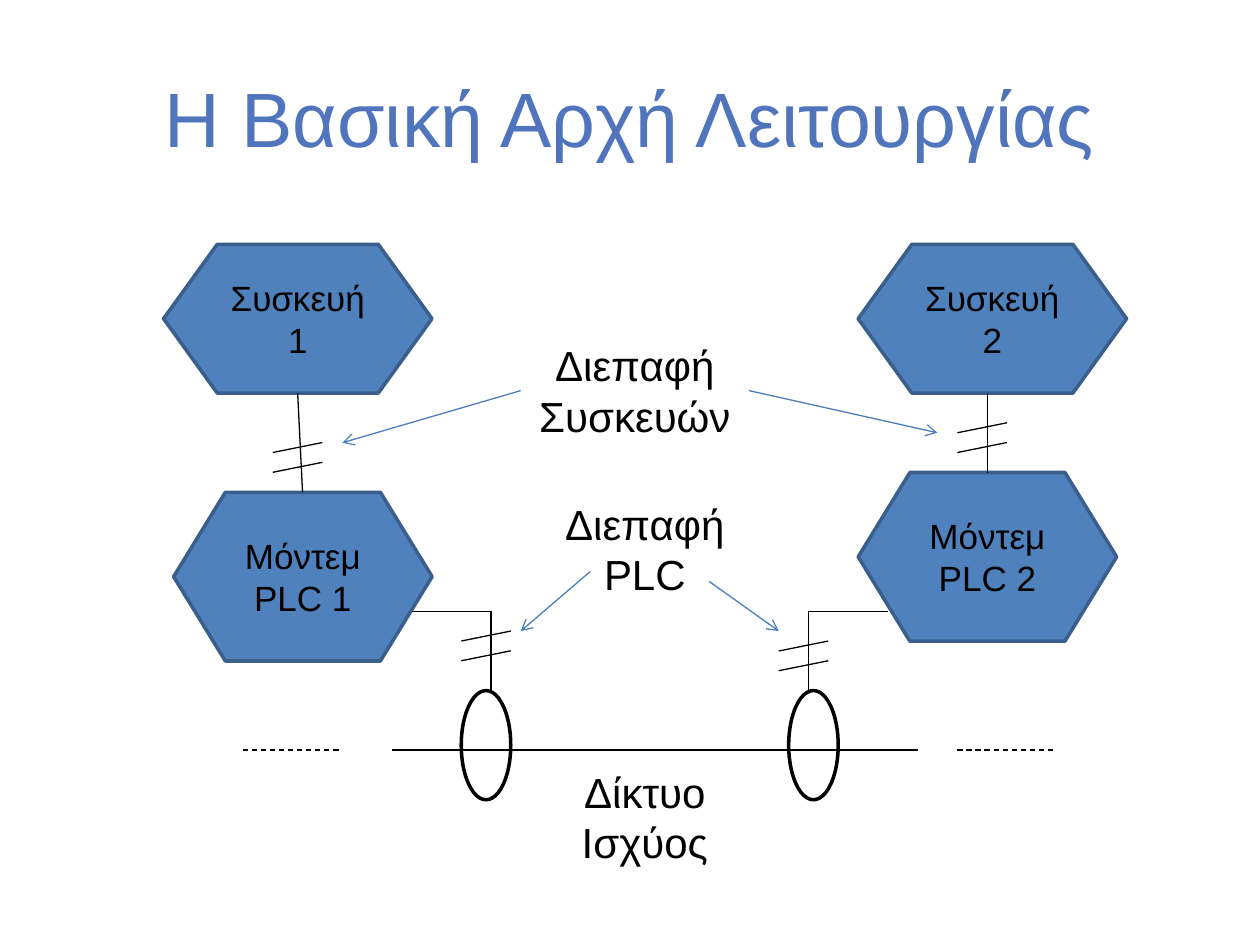
from dataclasses import dataclass
from typing import Any, NamedTuple, Optional

from lxml.etree import SubElement
from pptx import Presentation
from pptx.dml.color import RGBColor as RGB
from pptx.enum.dml import MSO_LINE as Dash
from pptx.enum.shapes import MSO_CONNECTOR as Conn, MSO_SHAPE as Shape
from pptx.enum.text import MSO_ANCHOR as Anchor, MSO_AUTO_SIZE as AutoSize, PP_ALIGN as Align
from pptx.oxml.ns import qn
from pptx.util import Pt


@dataclass(frozen=True)
class Theme:
    font: str = "Arial"
    title: RGB = RGB(0x50, 0x75, 0xBC)
    ink: RGB = RGB(0, 0, 0)
    paper: RGB = RGB(255, 255, 255)
    block: RGB = RGB(0x4F, 0x81, 0xBD)
    block_edge: RGB = RGB(0x3A, 0x5F, 0x8C)
    arrow: RGB = RGB(0x4B, 0x7E, 0xBC)
    title_size: int = 44
    label_size: int = 24
    block_size: int = 20
    edge: float = 2
    wire: float = 0.75


class Box(NamedTuple):
    left: float
    top: float
    width: float
    height: float


class Item(NamedTuple):
    text: str
    box: Box


class Wire(NamedTuple):
    x1: float
    y1: float
    x2: float
    y2: float
    arrow: bool = False
    dash: Optional[Any] = None


T = Theme()
MAINS_Y = 428.6
TITLE = Item("Η Βασική Αρχή Λειτουργίας", Box(36, 21.6, 648, 90))
DEVICE, MODEM, LABEL, COUPLER = (153.4, 85), (147.7, 96.4), (130.4, 65.4), (28.3, 62.4)

BLOCKS = [
    Item("Συσκευή 1", Box(93.5, 139.6, *DEVICE)),
    Item("Συσκευή 2", Box(490.4, 139.6, *DEVICE)),
    Item("Μόντεμ PLC 1", Box(99.2, 281.3, *MODEM)),
    Item("Μόντεμ PLC 2", Box(490.4, 270, *MODEM)),
]
LABELS = [
    Item("Διεπαφή Συσκευών", Box(297.6, 190.6, *LABEL)),
    Item("Διεπαφή PLC", Box(303.3, 281.3, *LABEL)),
    Item("Δίκτυο Ισχύος", Box(303.3, 434.2, *LABEL)),
]
COUPLERS = [Box(x, 394.6, *COUPLER) for x in (450.7, 263.6)]

WIRES = [
    # device to modem
    Wire(170.1, 224.6, 172.9, 281.3),
    Wire(564.1, 224.6, 564.1, 270),
    # modem to coupler
    Wire(280.6, 349.3, 235.3, 349.3),
    Wire(280.6, 349.3, 280.6, 394.6),
    Wire(507.4, 349.3, 462, 349.3),
    Wire(462, 349.3, 462, 394.6),
    # power network
    Wire(223.9, MAINS_Y, 524.4, MAINS_Y),
    Wire(138.9, MAINS_Y, 195.6, MAINS_Y, dash=Dash.DASH),
    Wire(547.1, MAINS_Y, 603.8, MAINS_Y, dash=Dash.DASH),
    # label pointers
    Wire(297.6, 223.2, 195.6, 253, arrow=True),
    Wire(428, 223.2, 535.7, 247.3, arrow=True),
    Wire(337.3, 326.6, 297.6, 360.6, arrow=True),
    Wire(405.3, 332.3, 445, 360.6, arrow=True),
]
SLASH_PAIRS = [(155.9, 258.6), (547.1, 247.3), (263.6, 366.3), (445, 372)]
SLASH_DX, SLASH_DY, SLASH_GAP = 28.3, -5.7, 11.3


def points(values) -> list:
    return [Pt(v) for v in values]


def assign(obj, values: dict) -> None:
    for name, value in values.items():
        setattr(obj, name, value)


def write(sp, text: str, size: float, color: RGB, anchor) -> None:
    tf = sp.text_frame
    assign(tf, {"word_wrap": True, "vertical_anchor": anchor})
    p = tf.paragraphs[0]
    p.alignment = Align.CENTER
    r = p.add_run()
    r.text = text
    assign(r.font, {"name": T.font, "size": Pt(size)})
    r.font.color.rgb = color


def add_outlined(s, kind, box: Box, fill: RGB, edge: RGB):
    sp = s.shapes.add_shape(kind, *points(box))
    sp.shadow.inherit = False
    sp.fill.solid()
    sp.fill.fore_color.rgb = fill
    sp.line.color.rgb = edge
    sp.line.width = Pt(T.edge)
    return sp


def add_block(s, item: Item) -> None:
    sp = add_outlined(s, Shape.FLOWCHART_PREPARATION, item.box, T.block, T.block_edge)
    write(sp, item.text, T.block_size, T.ink, Anchor.MIDDLE)


def add_label(s, item: Item) -> None:
    sp = s.shapes.add_textbox(*points(item.box))
    write(sp, item.text, T.label_size, T.ink, Anchor.TOP)
    sp.text_frame.auto_size = AutoSize.SHAPE_TO_FIT_TEXT


def add_wire(s, wire: Wire) -> None:
    cx = s.shapes.add_connector(Conn.STRAIGHT, *points(wire[:4]))
    cx.line.color.rgb = T.arrow if wire.arrow else T.ink
    cx.line.width = Pt(T.wire)
    if wire.dash is not None:
        cx.line.dash_style = wire.dash
    sp_pr = cx._element.spPr
    if wire.arrow:
        SubElement(sp_pr.find(qn("a:ln")), qn("a:tailEnd"), type="arrow")
    SubElement(sp_pr, qn("a:effectLst"))


def add_slashes(s, x: float, y: float) -> None:
    """Draw the two parallel strokes that mark an interface on a wire."""
    for top in (y, y + SLASH_GAP):
        add_wire(s, Wire(x, top, x + SLASH_DX, top + SLASH_DY))


def add_title(s, item: Item) -> None:
    sp = s.shapes.title
    assign(sp, dict(zip(("left", "top", "width", "height"), points(item.box))))
    write(sp, item.text, T.title_size, T.title, Anchor.MIDDLE)


def main() -> None:
    prs = Presentation()
    assign(prs, {"slide_width": Pt(720), "slide_height": Pt(540)})
    s = prs.slides.add_slide(prs.slide_layouts[5])
    add_title(s, TITLE)
    for box in COUPLERS:
        add_outlined(s, Shape.OVAL, box, T.paper, T.ink)
    for item in BLOCKS:
        add_block(s, item)
    for wire in WIRES:
        add_wire(s, wire)
    for x, y in SLASH_PAIRS:
        add_slashes(s, x, y)
    for item in LABELS:
        add_label(s, item)
    prs.save("out.pptx")


if __name__ == "__main__":
    main()
